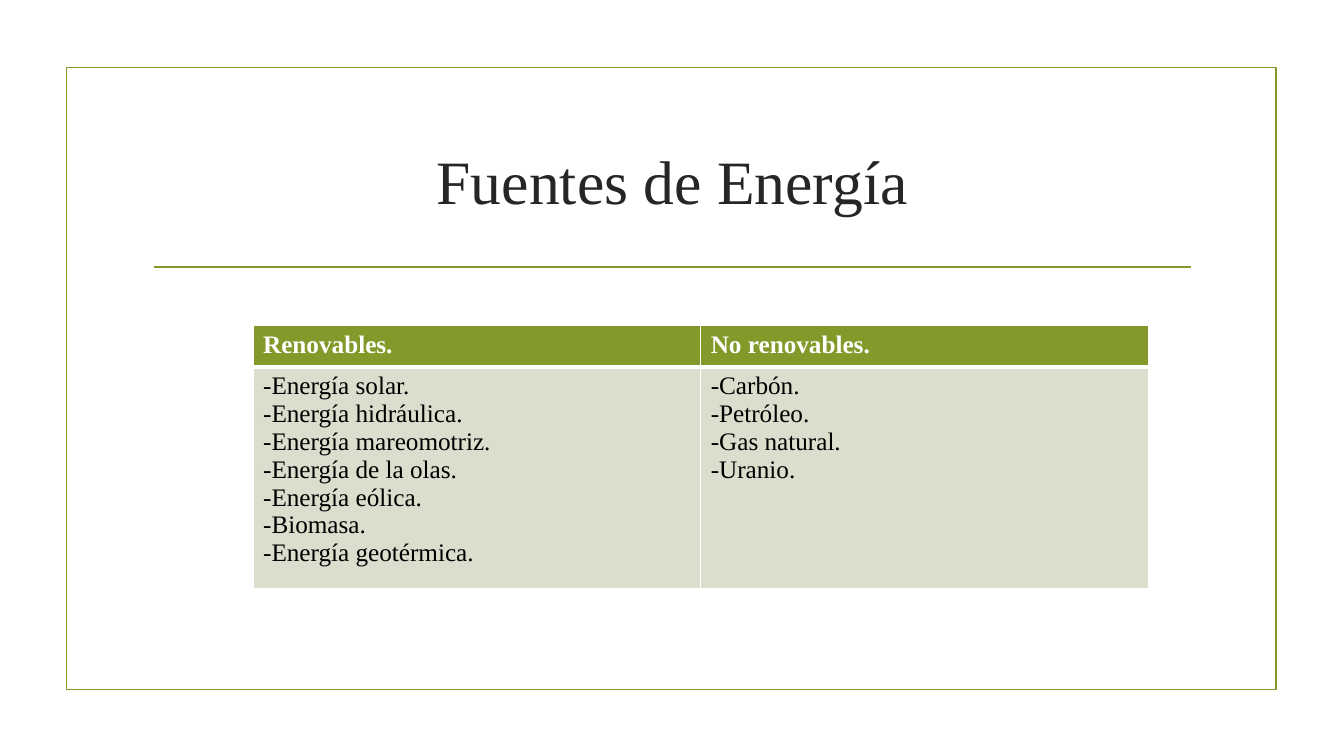
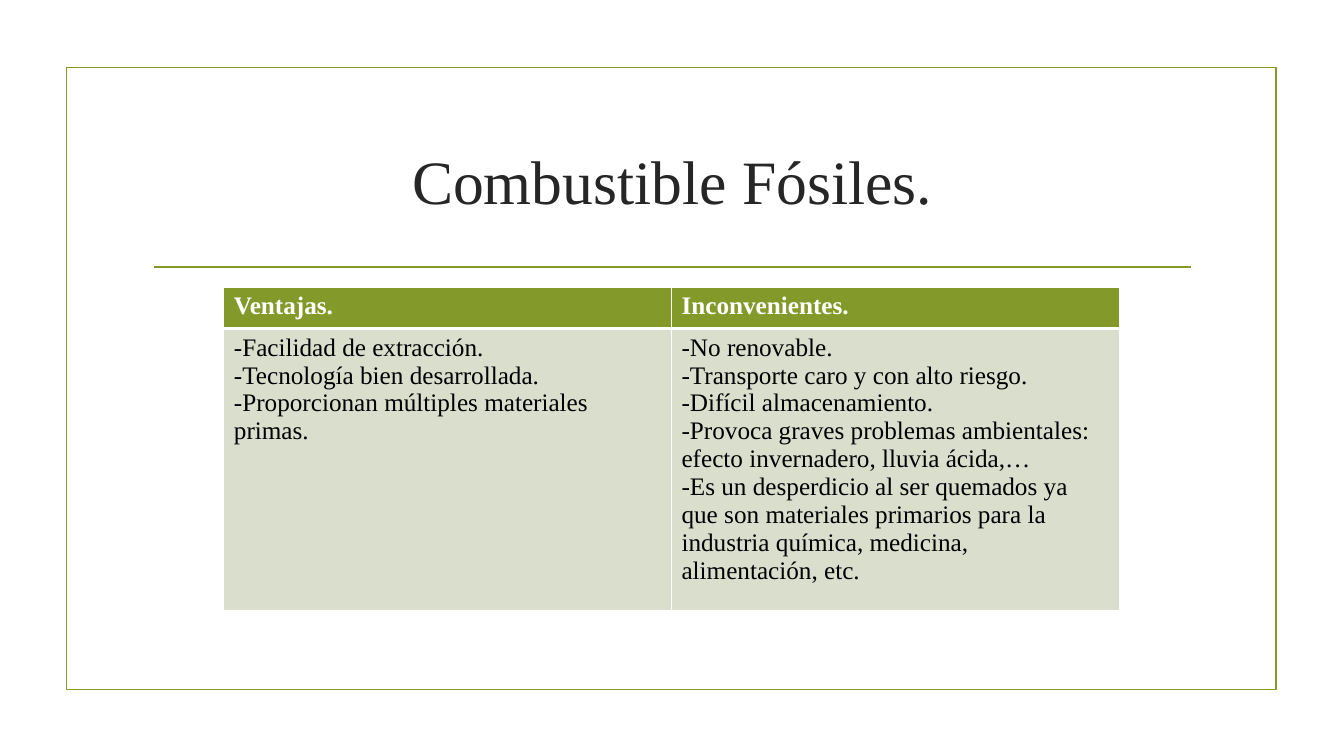
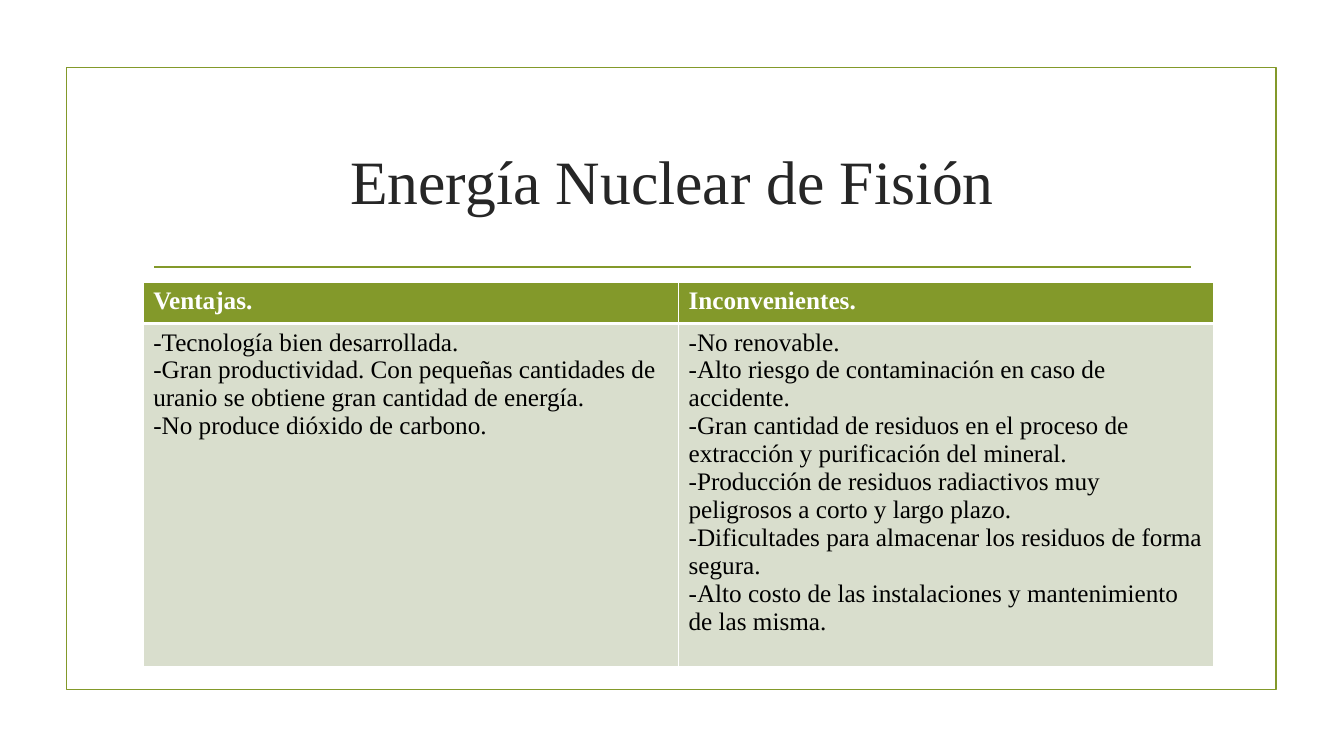
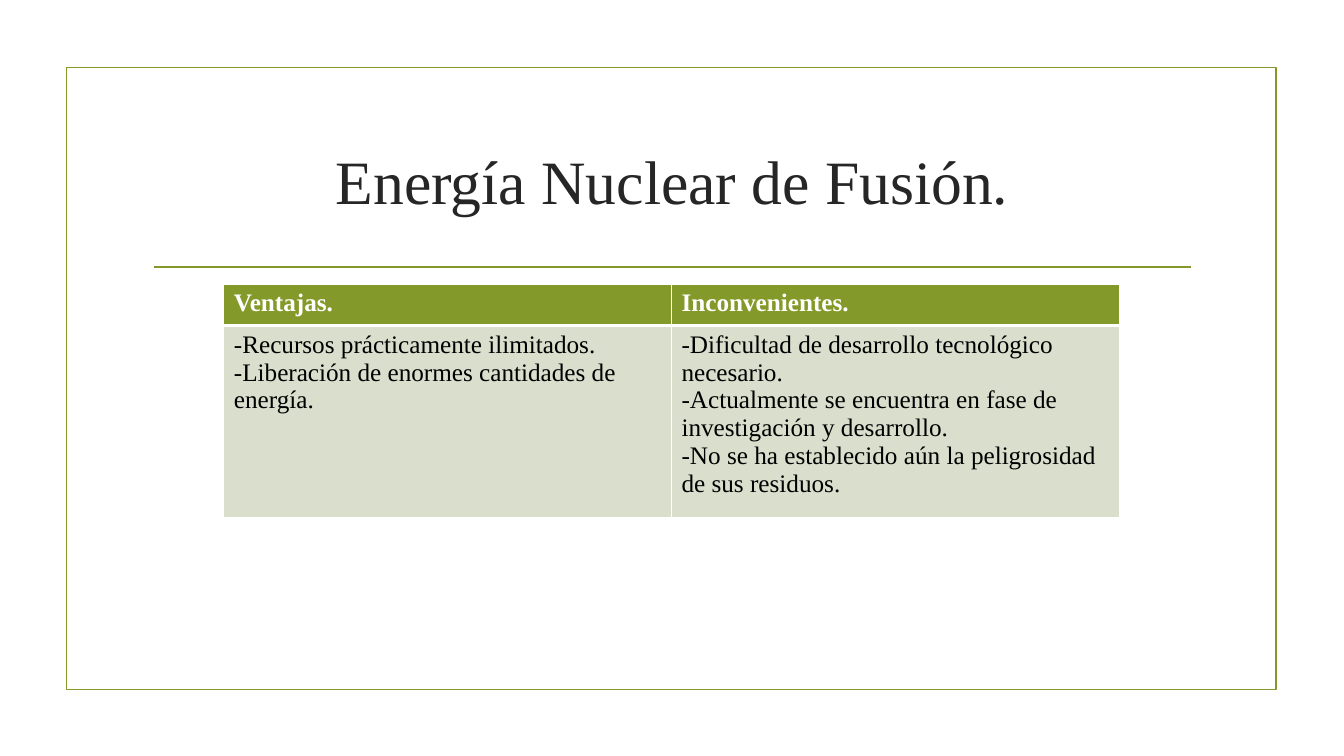
from dataclasses import dataclass

from lxml.etree import SubElement
from pptx import Presentation
from pptx.dml.color import RGBColor
from pptx.enum.shapes import MSO_CONNECTOR, MSO_SHAPE
from pptx.enum.text import MSO_ANCHOR, PP_ALIGN
from pptx.oxml.ns import qn
from pptx.util import Pt


@dataclass(frozen=True)
class Theme:
    green: str = "83992A"
    pale: str = "D9DECD"
    white: str = "FFFFFF"
    black: str = "000000"
    title_color: str = "262626"
    font: str = "Times New Roman"
    title_size: int = 44
    table_size: int = 18
    line_width: float = 1.25
    border: int = 1
    header_rule: int = 3


theme = Theme()
PX = 9144
HEADER_HEIGHT = 41


def style_text(frame, size, color, bold=False, align=PP_ALIGN.LEFT):
    for para in frame.paragraphs:
        para.alignment = align
        for span in para.runs:
            span.font.name = theme.font
            span.font.size = Pt(size)
            span.font.bold = bold
            span.font.color.rgb = RGBColor.from_string(color)


def add_borders(cell, top, bottom):
    properties = cell._tc.get_or_add_tcPr()
    widths = {"a:lnL": theme.border, "a:lnR": theme.border, "a:lnT": top, "a:lnB": bottom}
    for tag, width in widths.items():
        edge = SubElement(properties, qn(tag), w=str(Pt(width)))
        fill = SubElement(edge, qn("a:solidFill"))
        SubElement(fill, qn("a:srgbClr"), val=theme.white)


pages = [
    {
        "title": "Fuentes de Energía",
        "table": (251, 323, 888, 203),
        "columns": {
            "Renovables.": [
                "-Energía solar.",
                "-Energía hidráulica.",
                "-Energía mareomotriz.",
                "-Energía de la olas.",
                "-Energía eólica.",
                "-Biomasa.",
                "-Energía geotérmica.",
            ],
            "No renovables.": ["-Carbón.", "-Petróleo.", "-Gas natural.", "-Uranio."],
        },
    },
    {
        "title": "Combustible Fósiles.",
        "table": (222, 285, 888, 258),
        "columns": {
            "Ventajas.": [
                "-Facilidad de extracción.",
                "-Tecnología bien desarrollada.",
                "-Proporcionan múltiples materiales primas.",
            ],
            "Inconvenientes.": [
                "-No renovable.",
                "-Transporte caro y con alto riesgo.",
                "-Difícil almacenamiento.",
                "-Provoca graves problemas ambientales: efecto invernadero, lluvia ácida,…",
                "-Es un desperdicio al ser quemados ya que son materiales primarios "
                "para la industria química, medicina, alimentación, etc.",
            ],
        },
    },
    {
        "title": "Energía Nuclear de Fisión",
        "table": (142, 280, 1062, 313),
        "columns": {
            "Ventajas.": [
                "-Tecnología bien desarrollada.",
                "-Gran productividad. Con pequeñas cantidades de uranio "
                "se obtiene gran cantidad de energía.",
                "-No produce dióxido de carbono.",
            ],
            "Inconvenientes.": [
                "-No renovable.",
                "-Alto riesgo de contaminación en caso de accidente.",
                "-Gran cantidad de residuos en el proceso de extracción y purificación del mineral.",
                "-Producción de residuos radiactivos muy peligrosos a corto y largo plazo.",
                "-Dificultades para almacenar los residuos de forma segura.",
                "-Alto costo de las instalaciones y mantenimiento de las misma.",
            ],
        },
    },
    {
        "title": "Energía Nuclear de Fusión.",
        "table": (222, 282, 888, 175),
        "columns": {
            "Ventajas.": [
                "-Recursos prácticamente ilimitados.",
                "-Liberación de enormes cantidades de energía.",
            ],
            "Inconvenientes.": [
                "-Dificultad de desarrollo tecnológico necesario.",
                "-Actualmente se encuentra en fase de investigación y desarrollo.",
                "-No se ha establecido aún la peligrosidad de sus residuos.",
            ],
        },
    },
]

deck = Presentation()
deck.slide_width = 1333 * PX
deck.slide_height = 750 * PX

for content in pages:
    page = deck.slides.add_slide(deck.slide_layouts[6])

    border = page.shapes.add_shape(MSO_SHAPE.RECTANGLE, 66 * PX, 67 * PX, 1200 * PX, 617 * PX)
    border.shadow.inherit = False
    border.fill.background()

    rule = page.shapes.add_connector(MSO_CONNECTOR.STRAIGHT, 153 * PX, 265 * PX, 1181 * PX, 265 * PX)
    SubElement(rule._element.spPr, qn("a:effectLst"))
    for outlined in (border, rule):
        outlined.line.color.rgb = RGBColor.from_string(theme.green)
        outlined.line.width = Pt(theme.line_width)

    box = page.shapes.add_textbox(142 * PX, 107 * PX, 1050 * PX, 143 * PX)
    box.text_frame.word_wrap = True
    box.text_frame.vertical_anchor = MSO_ANCHOR.MIDDLE
    box.text_frame.text = content["title"]
    style_text(box.text_frame, theme.title_size, theme.title_color, align=PP_ALIGN.CENTER)

    left, top, width, body_height = content["table"]
    columns = content["columns"]
    table = page.shapes.add_table(
        2, len(columns), left * PX, top * PX, width * PX, (HEADER_HEIGHT + body_height) * PX
    ).table
    table.rows[0].height = HEADER_HEIGHT * PX
    table.rows[1].height = body_height * PX

    for column, (heading, items) in enumerate(columns.items()):
        rows = [
            ([heading], theme.green, theme.white, True, theme.border, theme.header_rule),
            (items, theme.pale, theme.black, False, theme.header_rule, theme.border),
        ]
        for row, (lines, fill, color, bold, upper, lower) in enumerate(rows):
            cell = table.cell(row, column)
            add_borders(cell, upper, lower)
            cell.fill.solid()
            cell.fill.fore_color.rgb = RGBColor.from_string(fill)
            cell.text_frame.text = "\n".join(lines)
            style_text(cell.text_frame, theme.table_size, color, bold)

deck.save("out.pptx")
